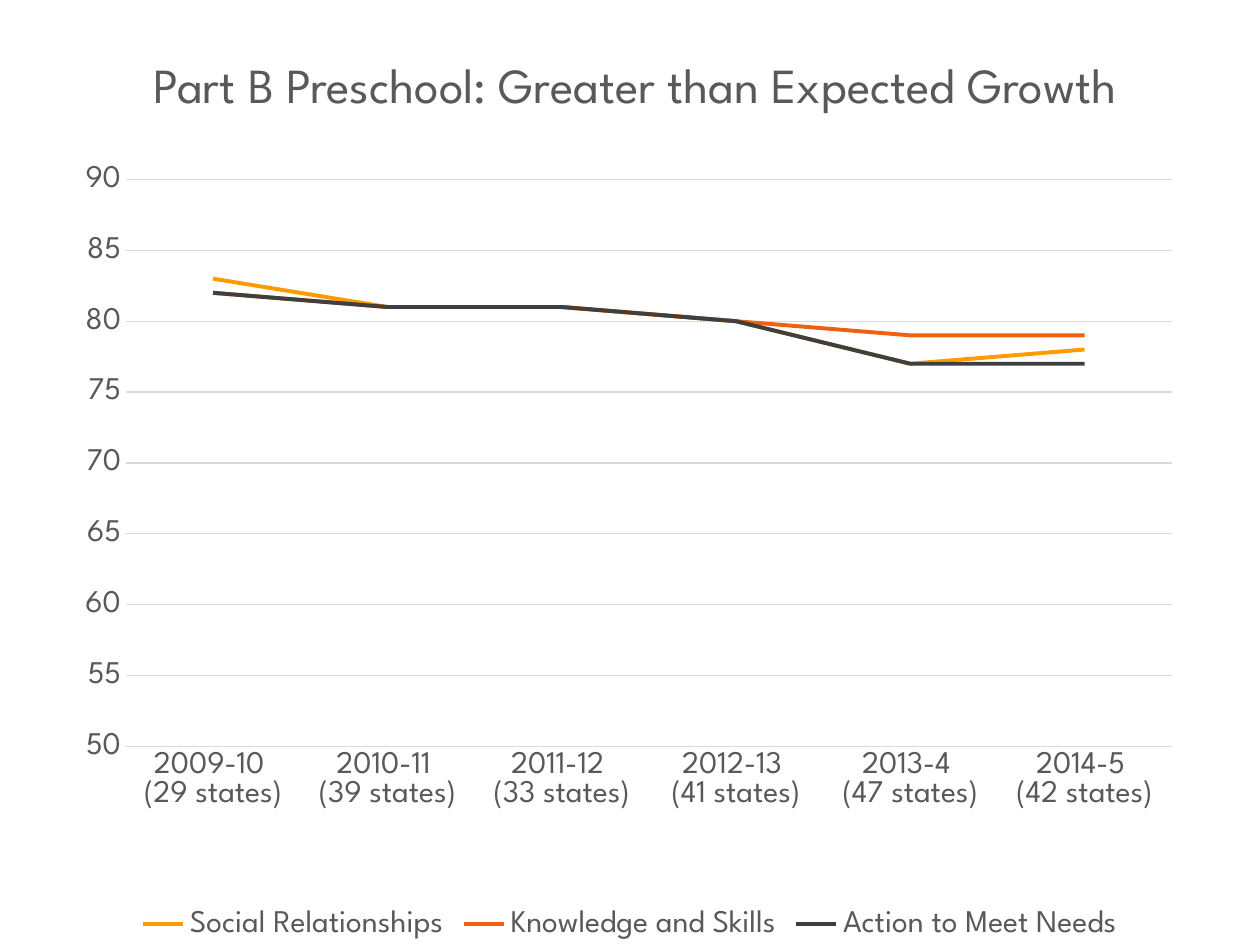
from dataclasses import dataclass

import pptx
import pptx.chart.data
import pptx.dml.color
import pptx.enum.chart
import pptx.enum.text
import pptx.oxml
import pptx.oxml.ns
import pptx.util
from pptx.util import Inches

FACE = "League Spartan"
HUES = {
    "text": "595959",
    "grid": "D9D9D9",
    "gold": "FE9B00",
    "orange": "EF6011",
    "dark": "3F3F3F",
}
YEARS = {
    "2009-10": 29,
    "2010-11": 39,
    "2011-12": 33,
    "2012-13": 41,
    "2013-4": 47,
    "2014-5": 42,
}


@dataclass
class Trend:
    name: str
    hue: str
    vals: tuple[int, ...]


TRENDS = [
    Trend("Social Relationships", "gold", (83, 81, 81, 80, 77, 78)),
    Trend("Knowledge and Skills", "orange", (82, 81, 81, 80, 79, 79)),
    Trend("Action to Meet Needs", "dark", (82, 81, 81, 80, 77, 77)),
]


def color(hue: str) -> pptx.dml.color.RGBColor:
    return pptx.dml.color.RGBColor.from_string(HUES[hue])


def apply(item, form: dict) -> None:
    for key, val in form.items():
        setattr(item, key, val)


def style(font, size: float) -> None:
    apply(font, {"name": FACE, "size": pptx.util.Pt(size), "bold": False})
    font.color.rgb = color("text")


def stroke(line, hue: str, width: float) -> None:
    line.color.rgb = color(hue)
    line.width = pptx.util.Pt(width)


def place(chart, x: float, y: float, w: float, h: float) -> None:
    """Fix the inner plot area, as fractions of the chart."""
    area = chart._chartSpace.chart.plotArea
    for old in area.findall(pptx.oxml.ns.qn("c:layout")):
        area.remove(old)
    sizes = "".join(
        f'<c:{key} val="{val}"/>' for key, val in zip("xywh", (x, y, w, h))
    )
    area.insert(0, pptx.oxml.parse_xml(
        f'<c:layout {pptx.oxml.ns.nsdecls("c")}><c:manualLayout>'
        '<c:layoutTarget val="inner"/><c:xMode val="edge"/>'
        f'<c:yMode val="edge"/>{sizes}</c:manualLayout></c:layout>'))


def clear(chart) -> None:
    """Leave the chart without background or frame."""
    chart._chartSpace.chart.addnext(pptx.oxml.parse_xml(
        f'<c:spPr {pptx.oxml.ns.nsdecls("c", "a")}><a:noFill/>'
        '<a:ln><a:noFill/></a:ln></c:spPr>'))


def draw(slide, trends: list[Trend]) -> None:
    data = pptx.chart.data.CategoryChartData(number_format="General")
    data.categories = [f"{year} \n({n} states)" for year, n in YEARS.items()]
    for trend in trends:
        data.add_series(trend.name, trend.vals)
    chart = slide.shapes.add_chart(
        pptx.enum.chart.XL_CHART_TYPE.LINE,
        0, 0, Inches(10), Inches(7.5), data).chart
    apply(chart, {"has_title": False, "has_legend": True})
    style(chart.font, 18)
    place(chart, 0.1, 0.19, 0.83, 0.6)
    clear(chart)

    # Legend
    apply(chart.legend, {
        "position": pptx.enum.chart.XL_LEGEND_POSITION.BOTTOM,
        "include_in_layout": False,
    })
    style(chart.legend.font, 18)

    # Axes
    none = pptx.enum.chart.XL_TICK_MARK.NONE
    for axis in (chart.category_axis, chart.value_axis):
        apply(axis, {"major_tick_mark": none, "minor_tick_mark": none})
        style(axis.tick_labels.font, 18)
    stroke(chart.category_axis.format.line, "grid", 0.75)
    apply(chart.value_axis, {
        "minimum_scale": 50,
        "maximum_scale": 90,
        "major_unit": 5,
        "has_major_gridlines": True,
    })
    chart.value_axis.format.line.fill.background()
    stroke(chart.value_axis.major_gridlines.format.line, "grid", 0.75)

    # Lines
    chart.plots[0].vary_by_categories = False
    for line, trend in zip(chart.plots[0].series, trends):
        line.smooth = False
        line.marker.style = pptx.enum.chart.XL_MARKER_STYLE.NONE
        stroke(line.format.line, trend.hue, 2.25)


def head(slide, text: str) -> None:
    title = slide.shapes.title
    apply(title, {
        "left": Inches(0.25),
        "top": Inches(0.25),
        "width": Inches(9.58),
        "height": Inches(0.83),
    })
    frame = title.text_frame
    apply(frame, {
        "text": text,
        "word_wrap": True,
        "vertical_anchor": pptx.enum.text.MSO_ANCHOR.MIDDLE,
    })
    par = frame.paragraphs[0]
    par.alignment = pptx.enum.text.PP_ALIGN.CENTER
    style(par.runs[0].font, 28)


def main() -> None:
    deck = pptx.Presentation()
    apply(deck, {"slide_width": Inches(10), "slide_height": Inches(7.5)})
    slide = deck.slides.add_slide(deck.slide_layouts[5])
    head(slide, "Part B Preschool: Greater than Expected Growth")
    draw(slide, TRENDS)
    deck.save("out.pptx")


if __name__ == "__main__":
    main()
